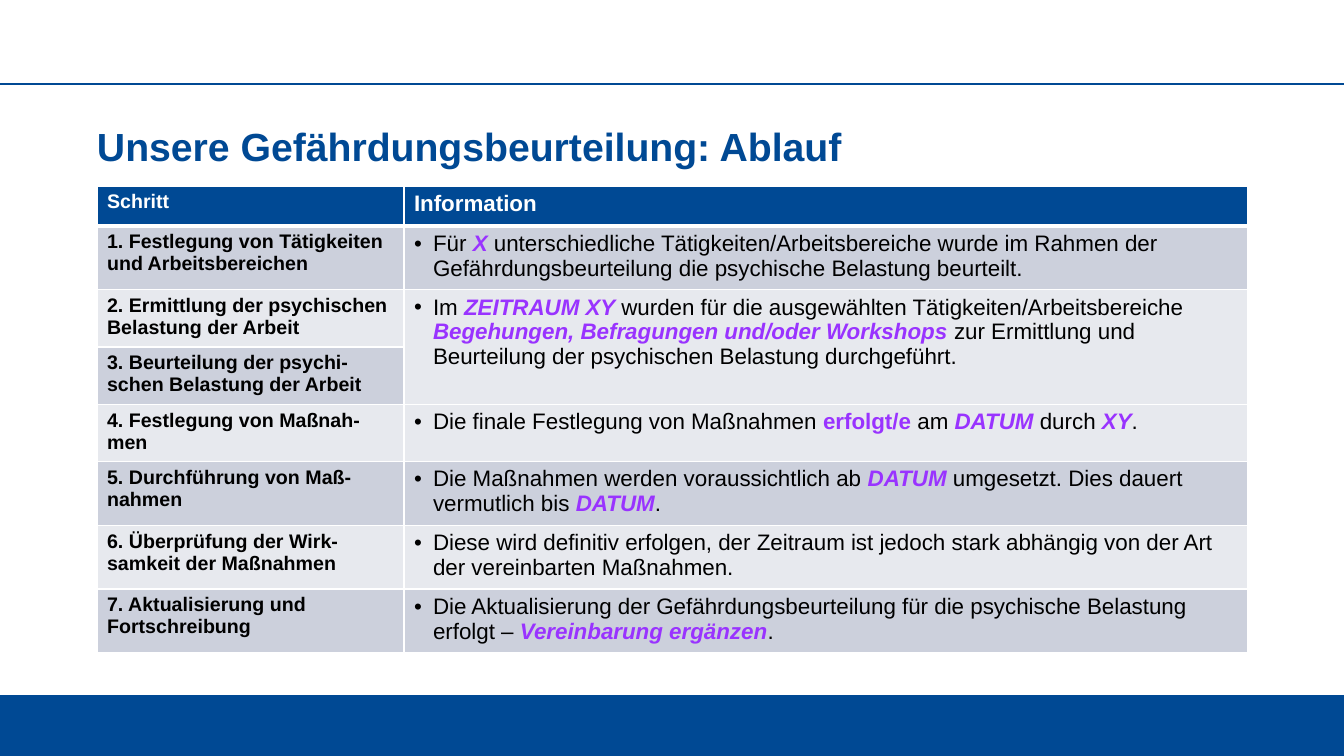
"""Builds the slide on the steps of the risk assessment."""
from lxml import etree
from pptx import Presentation, util as u
from pptx.dml.color import RGBColor
from pptx.enum import shapes, text
from pptx.oxml import ns

C = {"blue": "004994", "white": "FFFFFF", "black": "000000",
     "accent": "9933FF", "dark": "CCD0DC", "light": "E7E9EE"}
PLAIN = {}
BOLD = {"color": "accent", "bold": True}
FILL_IN = {**BOLD, "italic": True}
STEPS = [
    ("1. Festlegung von Tätigkeiten und Arbeitsbereichen", 60,
     [("Für ", PLAIN), ("X", FILL_IN),
      (" unterschiedliche Tätigkeiten/Arbeitsbereiche wurde im Rahmen der "
       "Gefährdungsbeurteilung die psychische Belastung beurteilt.", PLAIN)]),
    ("2. Ermittlung der psychischen Belastung der Arbeit", 54,
     [("Im ", PLAIN), ("ZEITRAUM XY ", FILL_IN),
      ("wurden für die ausgewählten Tätigkeiten/Arbeitsbereiche ", PLAIN),
      ("Begehungen, Befragungen und/oder Workshops ", FILL_IN),
      ("zur Ermittlung und Beurteilung der psychischen Belastung durchgeführt.", PLAIN)]),
    ("3. Beurteilung der psychi-schen Belastung der Arbeit", 54, []),
    ("4. Festlegung von Maßnah-men", 54,
     [("Die finale Festlegung von Maßnahmen ", PLAIN), ("erfolgt/e ", BOLD),
      ("am ", PLAIN), ("DATUM ", FILL_IN), ("durch ", PLAIN),
      ("XY", FILL_IN), (".", PLAIN)]),
    ("5. Durchführung von Maß-nahmen", 60,
     [("Die Maßnahmen werden voraussichtlich ab ", PLAIN), ("DATUM ", FILL_IN),
      ("umgesetzt. Dies dauert vermutlich bis ", PLAIN),
      ("DATUM", FILL_IN), (".", PLAIN)]),
    ("6. Überprüfung der Wirk-samkeit der Maßnahmen", 60,
     [("Diese wird definitiv erfolgen, der Zeitraum ist jedoch stark abhängig "
       "von der Art der vereinbarten Maßnahmen.", PLAIN)]),
    ("7. Aktualisierung und Fortschreibung", 60,
     [("Die Aktualisierung der Gefährdungsbeurteilung für die psychische "
       "Belastung erfolgt – ", PLAIN),
      ("Vereinbarung ergänzen", FILL_IN), (".", PLAIN)]),
]


def px(n):
    """Turn pixels into EMU."""
    return u.Emu(round(n * 914400 / 100.8))


def add_run(p, words, size=16, color="black", bold=False, italic=False):
    """Append one formatted run to a paragraph."""
    r = p.add_run()
    r.text = words
    r.font.name = "Arial"
    r.font.size = u.Pt(size)
    r.font.bold = bold
    r.font.italic = italic
    r.font.color.rgb = RGBColor.from_string(C[color])


prs = Presentation()
prs.slide_width, prs.slide_height = px(1344), px(756)
s = prs.slides.add_slide(prs.slide_layouts[6])

footer = s.shapes.add_shape(shapes.MSO_SHAPE.RECTANGLE, 0, px(695), px(1344), px(61))
footer.shadow.inherit = False
footer.fill.solid()
footer.fill.fore_color.rgb = RGBColor.from_string(C["blue"])
footer.line.fill.background()

rule = s.shapes.add_connector(shapes.MSO_CONNECTOR.STRAIGHT, 0, px(84), px(1344), px(84))
rule.line.color.rgb = RGBColor.from_string(C["blue"])
rule.line.width = u.Pt(2)
etree.SubElement(rule.element.spPr, ns.qn("a:effectLst"))

title = s.shapes.add_textbox(px(97), px(128), px(1151), px(57))
tf = title.text_frame
tf.word_wrap = True
tf.vertical_anchor = text.MSO_ANCHOR.TOP
tf.margin_left = tf.margin_top = 0
p = tf.paragraphs[0]
p.line_spacing = 0.9
add_run(p, "Unsere Gefährdungsbeurteilung: Ablauf", size=28, color="blue", bold=True)

heights = [40] + [height for _, height, _ in STEPS]
table = s.shapes.add_table(len(heights), 2, px(97), px(186), px(1151), px(sum(heights))).table
for column, width in zip(table.columns, (307, 844)):
    column.width = px(width)
for row, height in zip(table.rows, heights):
    row.height = px(height)

for i, row in enumerate(table.rows):
    for cell in row.cells:
        tcPr = cell._tc.get_or_add_tcPr()
        for side in ("lnL", "lnR", "lnT", "lnB"):
            thick = (i, side) in ((0, "lnB"), (1, "lnT"))
            ln = etree.SubElement(tcPr, ns.qn(f"a:{side}"), w=str(u.Pt(3 if thick else 1)))
            fill = etree.SubElement(ln, ns.qn("a:solidFill"))
            etree.SubElement(fill, ns.qn("a:srgbClr"), val=C["white"])
        cell.fill.solid()
        shade = "blue" if i == 0 else "dark" if i % 2 else "light"
        cell.fill.fore_color.rgb = RGBColor.from_string(C[shade])

for j, (heading, size) in enumerate((("Schritt", 14), ("Information", 16))):
    add_run(table.cell(0, j).text_frame.paragraphs[0], heading,
            size=size, color="white", bold=True)

table.cell(2, 1).merge(table.cell(3, 1))
for i, (step, _, info) in enumerate(STEPS, 1):
    add_run(table.cell(i, 0).text_frame.paragraphs[0], step, size=14, bold=True)
    if info:
        p = table.cell(i, 1).text_frame.paragraphs[0]
        pPr = p._p.get_or_add_pPr()
        pPr.set("marL", str(px(19)))
        pPr.set("indent", str(-px(19)))
        etree.SubElement(pPr, ns.qn("a:buFont"), typeface="Arial")
        etree.SubElement(pPr, ns.qn("a:buChar"), char="•")
        for words, style in info:
            add_run(p, words, **style)

prs.save("out.pptx")
